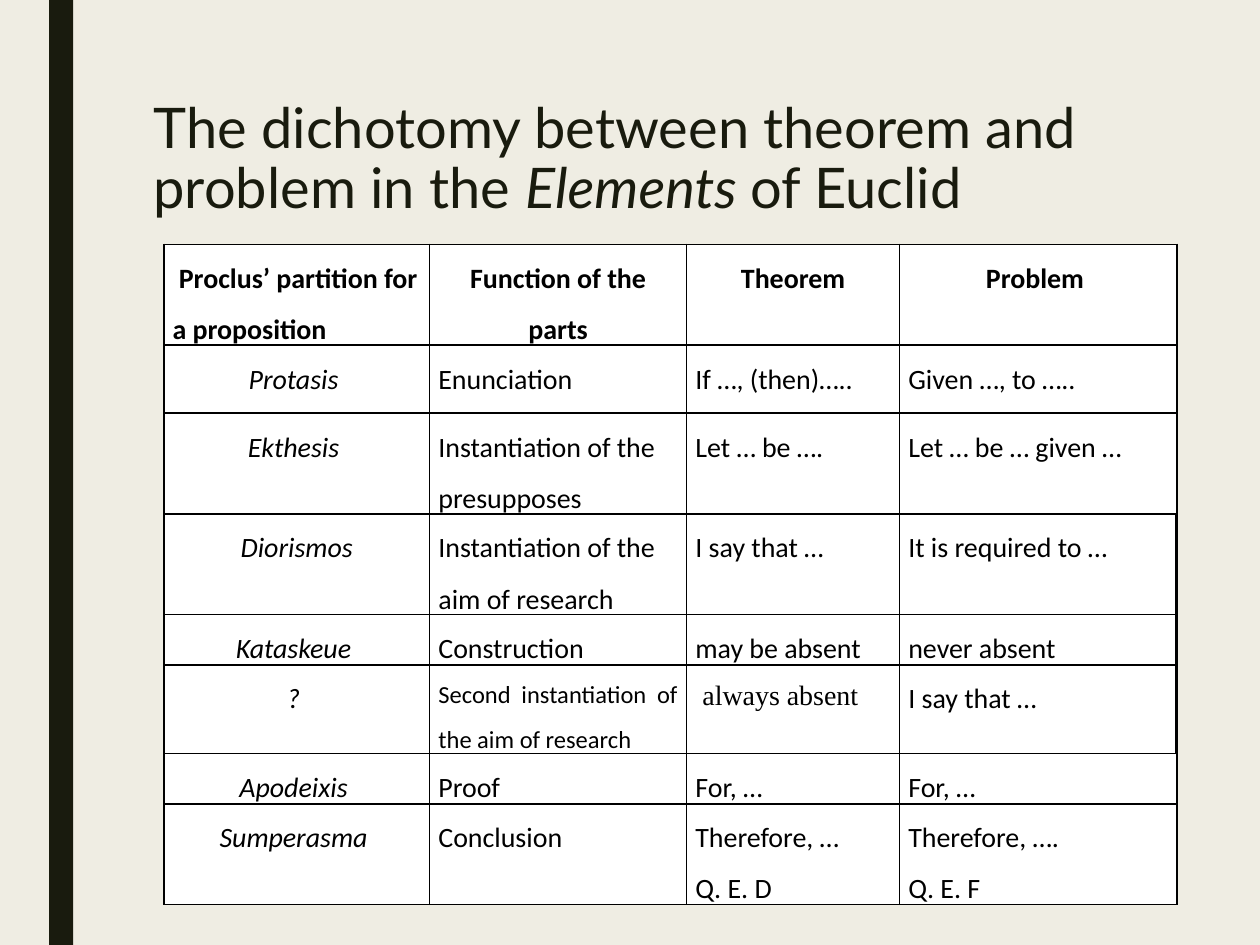
import pptx
import pptx.util
import pptx.dml.color
import pptx.enum.shapes
import pptx.enum.text
import pptx.oxml.ns
from dataclasses import dataclass
from lxml import etree

# The slide is a grid of 100 columns by 75 rows
WIDE, HIGH = pptx.util.Inches(10), pptx.util.Inches(7.5)
COLS, ROWS = 100, 75
HUES = {"paper": "EFEDE3", "dark": "191B0E", "ink": "000000", "cell": "FFFFFF"}
ALIGN = pptx.enum.text.PP_ALIGN
LEFT, MID, FULL = ALIGN.LEFT, ALIGN.CENTER, ALIGN.JUSTIFY


@dataclass
class Style:
    font: str = "Calibri"
    size: float = 16
    hue: str = "ink"
    bold: bool = False
    slant: bool = False


@dataclass
class Entry:
    text: str
    style: Style
    align: int = LEFT
    edge: float = 1  # width of the right border


def span(cols: float) -> int:
    return round(WIDE * cols / COLS)


def drop(rows: float) -> int:
    return round(HIGH * rows / ROWS)


def tint(name: str) -> pptx.dml.color.RGBColor:
    return pptx.dml.color.RGBColor.from_string(HUES[name])


def paint(fill, name: str) -> None:
    fill.solid()
    fill.fore_color.rgb = tint(name)


def write(para, text: str, style: Style) -> None:
    run = para.add_run()
    run.text = text
    font = run.font
    font.name, font.size = style.font, pptx.util.Pt(style.size)
    font.bold, font.italic = style.bold, style.slant
    font.color.rgb = tint(style.hue)


def border(cell, side: str, width: float) -> None:
    props = cell._tc.get_or_add_tcPr()
    qn = pptx.oxml.ns.qn
    line = etree.SubElement(props, qn(f"a:ln{side}"), w=str(pptx.util.Pt(width)))
    fill = etree.SubElement(line, qn("a:solidFill"))
    etree.SubElement(fill, qn("a:srgbClr"), val=HUES["ink"])


def draw(cell, entry: Entry) -> None:
    cell.margin_left = cell.margin_right = pptx.util.Inches(0.07)
    cell.margin_top = cell.margin_bottom = 0
    for side in "LRTB":
        border(cell, side, entry.edge if side == "R" else 1)
    paint(cell.fill, "cell")
    frame = cell.text_frame
    for num, line in enumerate(entry.text.split("\n")):
        para = frame.add_paragraph() if num else frame.paragraphs[0]
        para.alignment, para.line_spacing = entry.align, 1.5
        write(para, line, entry.style)


# Table content
HEAD, PLAIN, TERM = Style(bold=True), Style(), Style(slant=True)
SMALL, SERIF = Style(size=14), Style(font="Times New Roman")
THICK = 2.25


def part(term: str, role: str | Entry, proof: str | Entry, task: str,
         edge: float = 1) -> list[Entry]:
    rest = [item if isinstance(item, Entry) else Entry(item, PLAIN)
            for item in (role, proof)]
    return [Entry(term, TERM, MID), *rest, Entry(task, PLAIN, edge=edge)]


GRID = [
    [Entry(" Proclus’ partition for a proposition", HEAD)]
    + [Entry(text, HEAD, MID)
       for text in ("Function of the parts", "Theorem", "Problem ")],
    part("Protasis ", "Enunciation", "If …, (then)…..", "Given …, to ….."),
    part("Ekthesis ", "Instantiation of the presupposes", "Let … be ….",
         "Let … be … given …"),
    part("Diorismos", "Instantiation of the aim of research", "I say that …",
         "It is required to …", THICK),
    part("Kataskeue ", "Construction", "may be absent", "never absent", THICK),
    part("? ", Entry("Second instantiation of the aim of research", SMALL, FULL),
         Entry(" always absent", SERIF, FULL), "I say that …", THICK),
    part("Apodeixis ", "Proof", "For, …", "For, …"),
    part("Sumperasma ", "Conclusion", "Therefore, …\nQ. E. D",
         "Therefore, ….\nQ. E. F"),
]
WIDTHS = [21.1, 20.4, 16.9, 22]
TALLS = [7.8, 5.4, 7.8, 7.8, 3.9, 4.7, 3.9, 7.8]


def main() -> None:
    deck = pptx.Presentation()
    deck.slide_width, deck.slide_height = WIDE, HIGH
    slide = deck.slides.add_slide(deck.slide_layouts[6])
    paint(slide.background.fill, "paper")

    # Side bar
    bar = slide.shapes.add_shape(pptx.enum.shapes.MSO_SHAPE.RECTANGLE,
                                 span(3.9), 0, span(1.9), HIGH)
    bar.shadow.inherit = False
    paint(bar.fill, "dark")
    bar.line.fill.background()

    # Title
    box = slide.shapes.add_textbox(span(11.2), drop(7.5), span(78.8), drop(9.5))
    box.text_frame.word_wrap = True
    para = box.text_frame.paragraphs[0]
    para.line_spacing = 0.89
    for text, slant in (("The dichotomy between theorem and problem in the ", False),
                        ("Elements ", True), ("of Euclid", False)):
        write(para, text, Style("Lato", 32, "dark", slant=slant))

    # Table
    table = slide.shapes.add_table(len(TALLS), len(WIDTHS), span(13), drop(19.4),
                                   span(sum(WIDTHS)), drop(sum(TALLS))).table
    table.first_row = table.horz_banding = False
    for col, width in zip(table.columns, WIDTHS):
        col.width = span(width)
    for row, tall, line in zip(table.rows, TALLS, GRID):
        row.height = drop(tall)
        for cell, entry in zip(row.cells, line):
            draw(cell, entry)

    deck.save("out.pptx")


if __name__ == "__main__":
    main()
